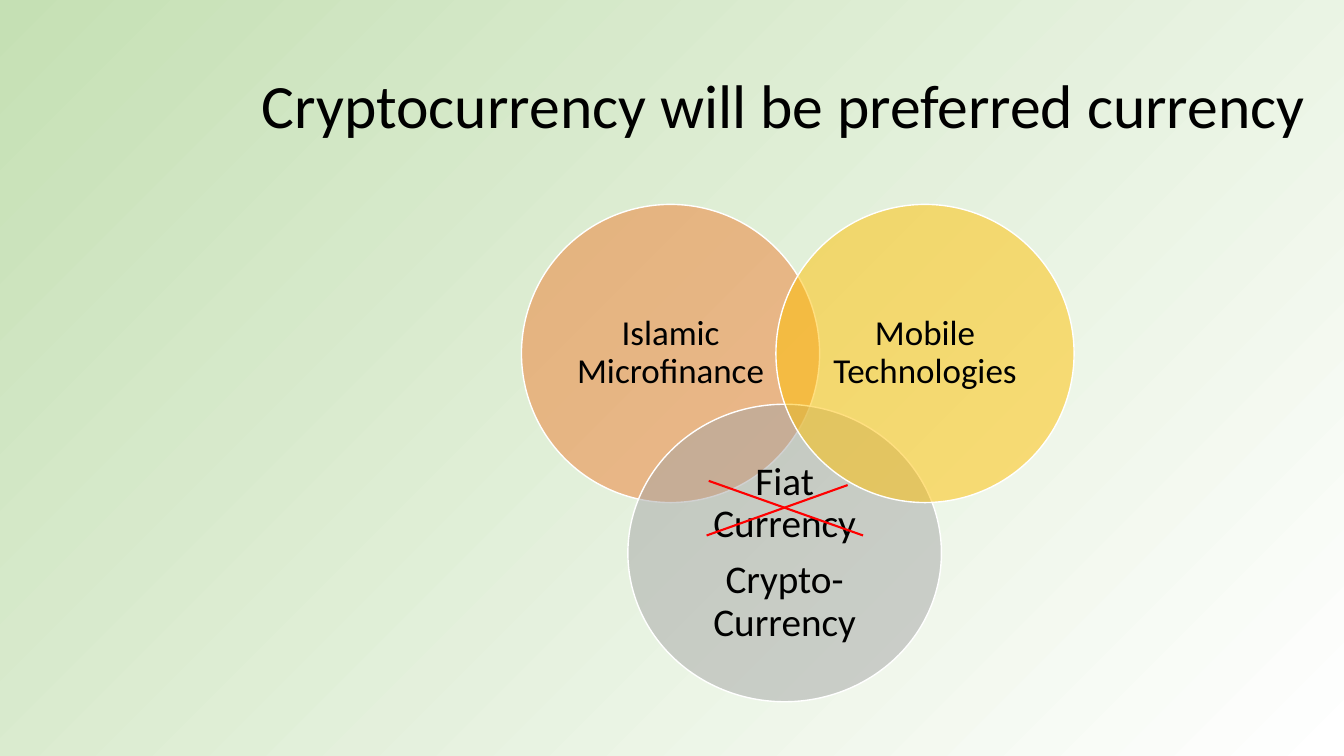
from lxml import etree
from pptx import Presentation
from pptx.dml.color import RGBColor
from pptx.enum.shapes import MSO_CONNECTOR, MSO_SHAPE
from pptx.enum.text import MSO_ANCHOR, PP_ALIGN
from pptx.oxml.ns import qn
from pptx.util import Pt

OVAL = MSO_SHAPE.OVAL
STRAIGHT = MSO_CONNECTOR.STRAIGHT
MIDDLE = MSO_ANCHOR.MIDDLE
LEFT = PP_ALIGN.LEFT
CENTER = PP_ALIGN.CENTER

BLACK = RGBColor(0x00, 0x00, 0x00)
WHITE = RGBColor(0xFF, 0xFF, 0xFF)
GREEN = RGBColor(0xC5, 0xE0, 0xB4)
ORANGE = RGBColor(0xED, 0x7D, 0x31)
GRAY = RGBColor(0xA5, 0xA5, 0xA5)
GOLD = RGBColor(0xFF, 0xC0, 0x00)
RED = RGBColor(0xFF, 0x00, 0x00)


def write(frame, *texts, size, align=LEFT, gap=0, inset=None):
    frame.word_wrap = True
    frame.vertical_anchor = MIDDLE
    if inset is not None:
        frame.margin_left = frame.margin_right = Pt(inset)
        frame.margin_top = frame.margin_bottom = Pt(inset)
    for index, text in enumerate(texts):
        paragraph = frame.add_paragraph() if index else frame.paragraphs[0]
        paragraph.text = text
        paragraph.alignment = align
        paragraph.line_spacing = 0.9
        if index:
            paragraph.space_before = Pt(gap)
        paragraph.font.name = "Calibri"
        paragraph.font.size = Pt(size)
        paragraph.font.color.rgb = BLACK


class VennSlide:
    def __init__(self, slide):
        self.slide = slide
        self.shapes = slide.shapes

    def background(self, start, end):
        fill = self.slide.background.fill
        fill.gradient()
        fill.gradient_angle = 315
        for stop, color, position in zip(fill.gradient_stops, (start, end), (0, 1)):
            stop.color.rgb = color
            stop.position = position

    def title(self, text, left, top, width, height):
        heading = self.shapes.add_textbox(Pt(left), Pt(top), Pt(width), Pt(height))
        write(heading.text_frame, text, size=44)

    def circle(self, texts, color, left, top, width, height, size, inset):
        topic = self.shapes.add_shape(OVAL, Pt(left), Pt(top), Pt(width), Pt(height))
        topic.shadow.inherit = False
        topic.fill.solid()
        topic.fill.fore_color.rgb = color
        tint = topic.fill._xPr.find(qn("a:solidFill"))[0]
        etree.SubElement(tint, qn("a:alpha"), val="50000")
        topic.line.color.rgb = WHITE
        topic.line.width = Pt(1)
        write(topic.text_frame, *texts, size=size, align=CENTER, gap=10, inset=inset)

    def strike(self, x1, y1, x2, y2):
        stroke = self.shapes.add_connector(STRAIGHT, Pt(x1), Pt(y1), Pt(x2), Pt(y2))
        stroke.line.color.rgb = RED
        stroke.line.width = Pt(1.5)
        etree.SubElement(stroke._element.spPr, qn("a:effectLst"))


def main():
    deck = Presentation()
    deck.slide_width, deck.slide_height = Pt(960), Pt(540)
    venn = VennSlide(deck.slides.add_slide(deck.slide_layouts[6]))

    venn.background(GREEN, WHITE)
    venn.title("Cryptocurrency will be preferred currency", 180, 25, 780, 104.5)
    venn.circle(["Islamic Microfinance"], ORANGE, 372.5, 146, 213, 213, 25, 7)
    venn.circle(["Fiat Currency", "Crypto- Currency"], GRAY, 448.5, 288.75, 224, 212.5, 28, 8.5)
    venn.circle(["Mobile Technologies"], GOLD, 554.25, 146, 213, 213, 25, 7)
    venn.strike(504.75, 382.5, 605.5, 346.5)
    venn.strike(506.25, 343.5, 616.5, 382.5)

    deck.save("out.pptx")


if __name__ == "__main__":
    main()
